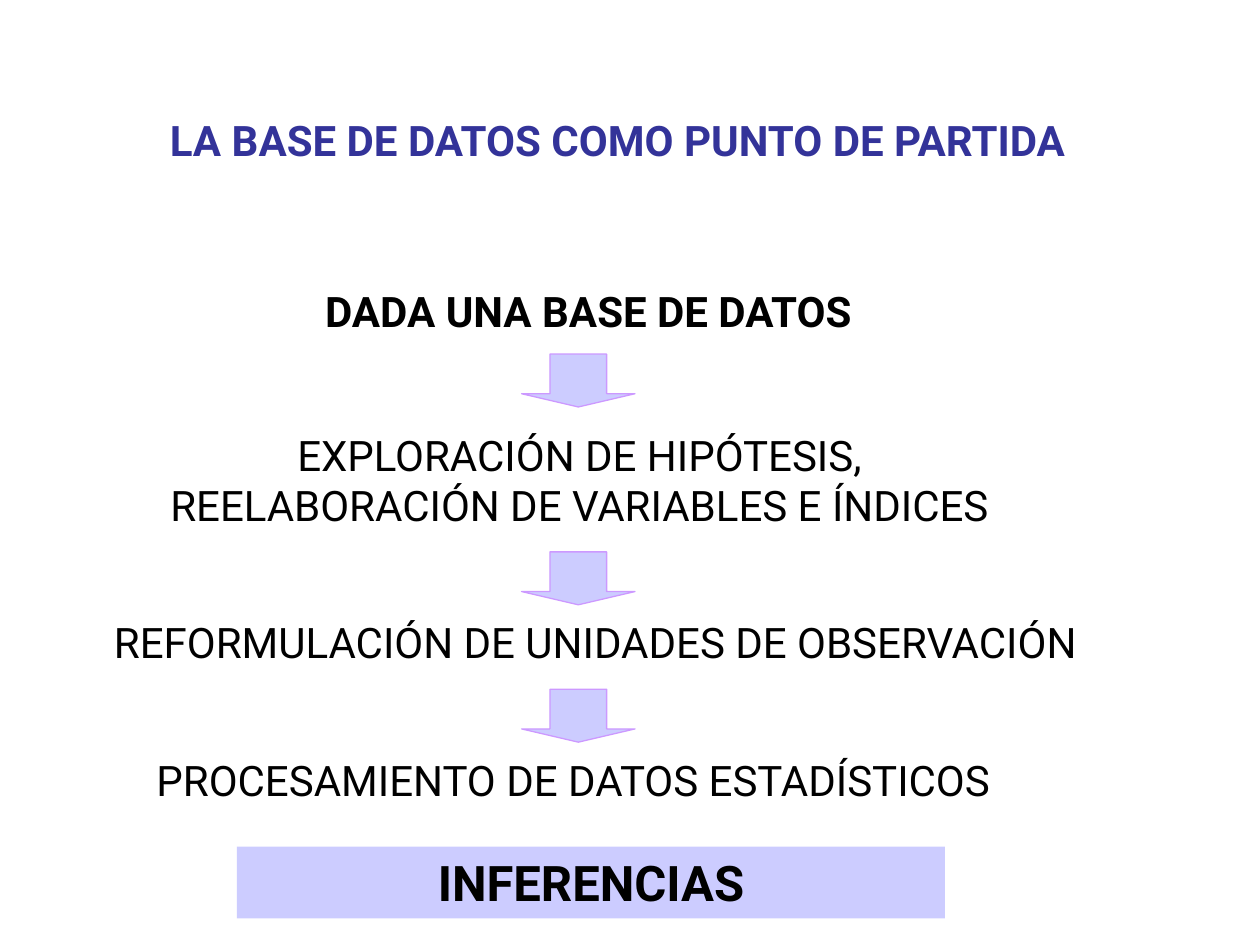
from pptx import Presentation
from pptx import util as u
from pptx.dml.color import RGBColor
from pptx.enum import shapes, text

COLORS = {"title": "333399", "body": "000000", "fill": "CCCCFF", "outline": "CC99FF"}
FONT = "Roboto"


def rgb(name):
    return RGBColor.from_string(COLORS[name])


def box(at):
    return [u.Inches(v) for v in at]


def write(sp, words, size=24, color="body", bold=False,
          align=text.PP_ALIGN.CENTER, anchor=text.MSO_ANCHOR.TOP):
    tf = sp.text_frame
    tf.word_wrap = True
    tf.vertical_anchor = anchor
    p = tf.paragraphs[0]
    p.alignment = align
    r = p.add_run()
    r.text = words
    r.font.name = FONT
    r.font.size = u.Pt(size)
    r.font.bold = bold
    r.font.color.rgb = rgb(color)


def add_text(s, at, words, **style):
    write(s.shapes.add_textbox(*box(at)), words, **style)


def add_filled(s, kind, at):
    sp = s.shapes.add_shape(kind, *box(at))
    sp.shadow.inherit = False
    sp.fill.solid()
    sp.fill.fore_color.rgb = rgb("fill")
    return sp


def add_banner(s, at, words):
    sp = add_filled(s, shapes.MSO_SHAPE.RECTANGLE, at)
    sp.line.fill.background()
    write(sp, words, size=28, bold=True)


def add_arrow(s, top):
    sp = add_filled(s, shapes.MSO_SHAPE.DOWN_ARROW, (4.14, top, 0.9, 0.42))
    sp.adjustments[0] = 0.5
    sp.adjustments[1] = 0.25
    sp.line.color.rgb = rgb("outline")
    sp.line.width = u.Pt(0.75)


def main():
    prs = Presentation()
    prs.slide_width, prs.slide_height = u.Inches(10), u.Inches(7.5)
    s = prs.slides.add_slide(prs.slide_layouts[6])

    add_text(s, (1.25, 0.86, 8.09, 0.51), "LA BASE DE DATOS COMO PUNTO DE PARTIDA",
             color="title", bold=True, align=text.PP_ALIGN.LEFT)
    add_text(s, (0.42, 2.11, 8.5, 0.71), "DADA UNA BASE DE DATOS",
             bold=True, anchor=text.MSO_ANCHOR.MIDDLE)

    steps = [
        ((0.98, 3.36, 7.24, 0.91),
         "EXPLORACIÓN DE HIPÓTESIS, REELABORACIÓN DE VARIABLES E ÍNDICES"),
        ((0.67, 4.84, 8.11, 0.51), "REFORMULACIÓN DE UNIDADES DE OBSERVACIÓN"),
        ((0.55, 5.94, 8, 0.51), "PROCESAMIENTO DE DATOS ESTADÍSTICOS"),
    ]
    for at, words in steps:
        add_text(s, at, words)

    add_banner(s, (1.88, 6.72, 5.62, 0.57), "INFERENCIAS")
    for top in (2.81, 4.38, 5.47):
        add_arrow(s, top)

    prs.save("out.pptx")


if __name__ == "__main__":
    main()
